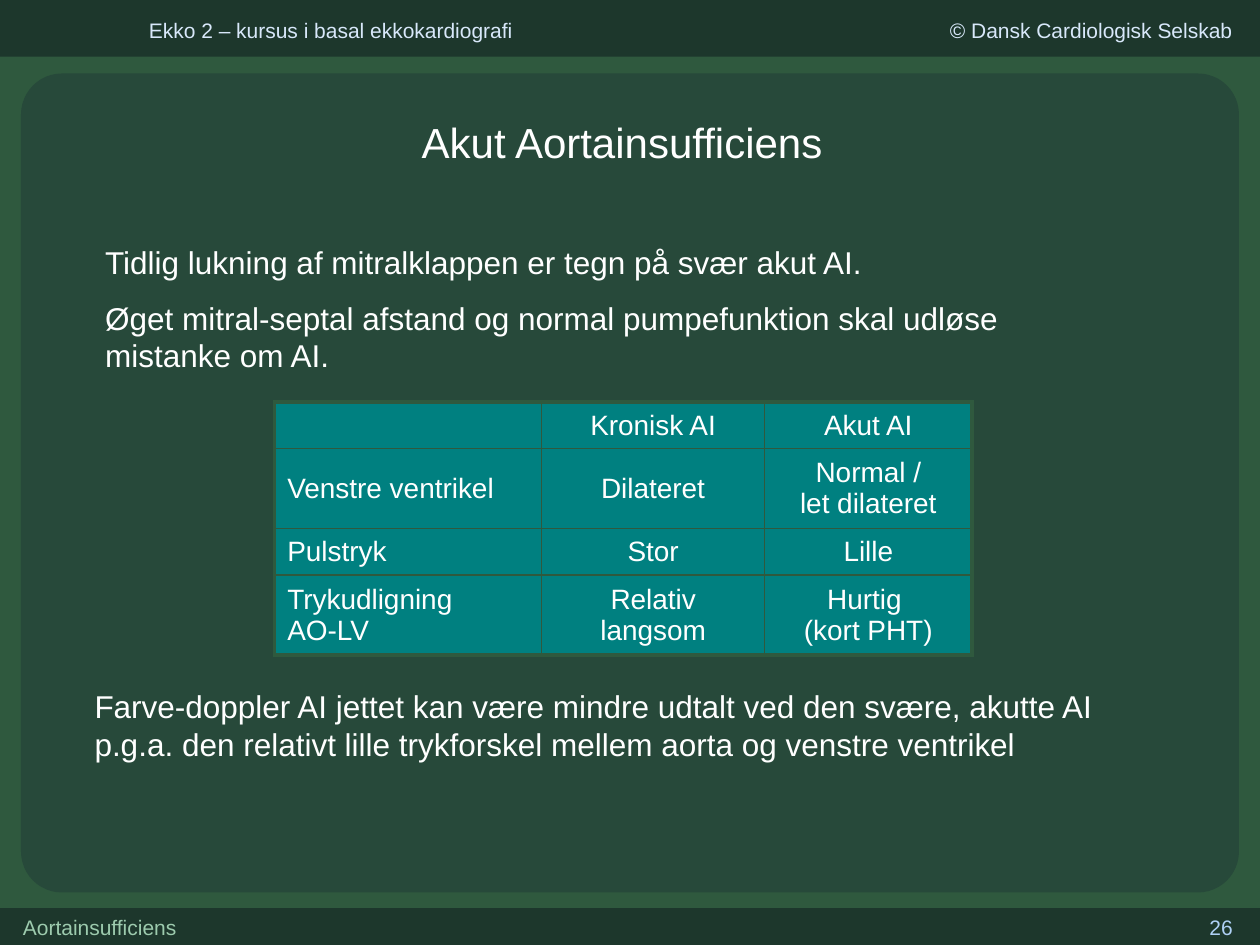
from lxml import etree
from pptx import Presentation
from pptx.dml.color import RGBColor
from pptx.enum.shapes import MSO_SHAPE
from pptx.enum.text import MSO_ANCHOR, PP_ALIGN
from pptx.oxml.ns import qn
from pptx.util import Pt

RECT, ROUNDED = MSO_SHAPE.RECTANGLE, MSO_SHAPE.ROUNDED_RECTANGLE
LEFT, CENTER, RIGHT = PP_ALIGN.LEFT, PP_ALIGN.CENTER, PP_ALIGN.RIGHT
TOP, MIDDLE = MSO_ANCHOR.TOP, MSO_ANCHOR.MIDDLE

GREEN = RGBColor(0x2F, 0x59, 0x3E)
BAR = RGBColor(0x1D, 0x37, 0x2C)
PANEL = RGBColor(0x27, 0x49, 0x3A)
TEAL = RGBColor(0x00, 0x80, 0x80)
WHITE = RGBColor(0xFF, 0xFF, 0xFF)
HEADER = RGBColor(0xD8, 0xE8, 0xFA)
NUMBER = RGBColor(0xAF, 0xD0, 0xF5)
TOPIC = RGBColor(0x9D, 0xCB, 0xAE)

WIDTH, HEIGHT = 720, 540
OUTER_LINE, INNER_LINE = 2.25, 1


class SlideBuilder:
    """Holds the style and the current page; all lengths are in points."""

    font = "Arial"
    cell_size = 16

    def __init__(self, page):
        self.page = page

    def background(self, color):
        fill = self.page.background.fill
        fill.solid()
        fill.fore_color.rgb = color

    def shape(self, kind, left, top, width, height, color):
        shape = self.page.shapes.add_shape(kind, Pt(left), Pt(top), Pt(width), Pt(height))
        shape.shadow.inherit = False
        shape.fill.solid()
        shape.fill.fore_color.rgb = color
        shape.line.fill.background()
        return shape

    def add_spans(self, para, text, size, color, align):
        para.alignment = align
        for index, line in enumerate(text.split("\n")):
            if index:
                para.add_line_break()
            span = para.add_run()
            span.text = line
            span.font.name = self.font
            span.font.size = Pt(size)
            span.font.color.rgb = color

    def text(self, left, top, width, height, paragraphs, size, color,
             align=LEFT, anchor=TOP, inset=7.2, gap=0):
        box = self.page.shapes.add_textbox(Pt(left), Pt(top), Pt(width), Pt(height))
        frame = box.text_frame
        frame.word_wrap = True
        frame.vertical_anchor = anchor
        frame.margin_left = frame.margin_right = Pt(inset)
        for index, text in enumerate(paragraphs):
            para = frame.add_paragraph() if index else frame.paragraphs[0]
            if index:
                para.space_before = Pt(gap)
            self.add_spans(para, text, size, color, align)

    def border(self, cell, side, width):
        line = etree.SubElement(cell._tc.get_or_add_tcPr(), qn(f"a:ln{side}"), w=str(Pt(width)))
        fill = etree.SubElement(line, qn("a:solidFill"))
        etree.SubElement(fill, qn("a:srgbClr"), val=str(GREEN))

    def table(self, left, top, widths, heights, rows):
        frame = self.page.shapes.add_table(len(heights), len(widths), Pt(left), Pt(top),
                                           Pt(sum(widths)), Pt(sum(heights)))
        table = frame.table
        table.first_row = table.horz_banding = False
        for column, width in zip(table.columns, widths):
            column.width = Pt(width)
        for row, height in zip(table.rows, heights):
            row.height = Pt(height)
        last_row, last_column = len(heights) - 1, len(widths) - 1
        for r, texts in enumerate(rows):
            for c, text in enumerate(texts):
                cell = table.cell(r, c)
                outer = {"L": c == 0, "R": c == last_column, "T": r == 0, "B": r == last_row}
                for side, is_outer in outer.items():
                    self.border(cell, side, OUTER_LINE if is_outer else INNER_LINE)
                cell.fill.solid()
                cell.fill.fore_color.rgb = TEAL
                cell.vertical_anchor = MIDDLE
                para = cell.text_frame.paragraphs[0]
                if text:
                    self.add_spans(para, text, self.cell_size, WHITE, CENTER if c else LEFT)
                else:
                    # Keeps an empty cell from stretching its row
                    etree.SubElement(para._p, qn("a:endParaRPr"), sz=str(self.cell_size * 100))


def main():
    deck = Presentation()
    deck.slide_width, deck.slide_height = Pt(WIDTH), Pt(HEIGHT)
    builder = SlideBuilder(deck.slides.add_slide(deck.slide_layouts[6]))

    # Background, bars and panel
    builder.background(GREEN)
    builder.shape(RECT, 0, 519, WIDTH, 21, BAR)
    builder.shape(RECT, 0, 0, WIDTH, 32.4, BAR)
    panel = builder.shape(ROUNDED, 12, 42, 696, 468, PANEL)
    panel.adjustments[0] = 0.05

    # Header
    builder.text(78, 6.5, 270, 21.6, ["Ekko 2 – kursus i basal ekkokardiografi"], 12, HEADER)
    builder.text(496, 6.5, 215.4, 21.6, ["© Dansk Cardiologisk Selskab"], 12, HEADER, RIGHT)

    # Title
    builder.text(49.5, 55.5, 612, 51, ["Akut Aortainsufficiens"], 24, WHITE, CENTER, MIDDLE)

    # Comparison of chronic and acute insufficiency
    builder.table(157, 229.8, [152.5, 127.5, 118.5], [26.6, 45.2, 26.6, 45.2], [
        ["", "Kronisk AI", "Akut AI"],
        ["Venstre ventrikel", "Dilateret", "Normal /\nlet dilateret"],
        ["Pulstryk", "Stor", "Lille"],
        ["Trykudligning\nAO-LV", "Relativ langsom", "Hurtig \n(kort PHT)"],
    ])

    # Statements above and below the table
    builder.text(53, 135.5, 589, 83.5, [
        "Tidlig lukning af mitralklappen er tegn på svær akut AI.",
        "Øget mitral-septal afstand og normal pumpefunktion skal udløse mistanke om AI.",
    ], 18, WHITE, gap=10)
    builder.text(54, 389, 602.5, 51, [
        "Farve-doppler AI jettet kan være mindre udtalt ved den svære, akutte AI "
        "p.g.a. den relativt lille trykforskel mellem aorta og venstre ventrikel",
    ], 18, WHITE, inset=0)

    # Footer
    builder.text(543.5, 519, 168, 18, ["26"], 12, NUMBER, RIGHT)
    builder.text(6, 519, 228, 18, ["Aortainsufficiens"], 12, TOPIC)

    deck.save("out.pptx")


if __name__ == "__main__":
    main()
